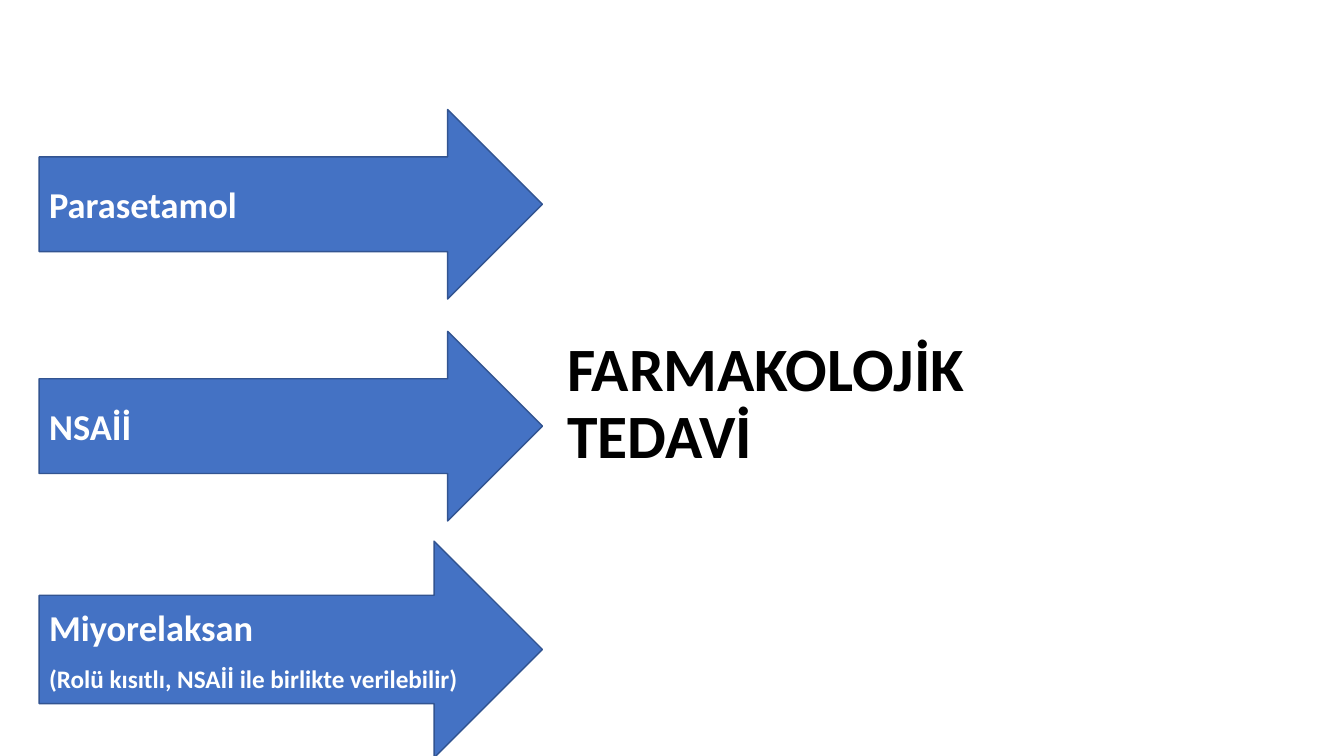
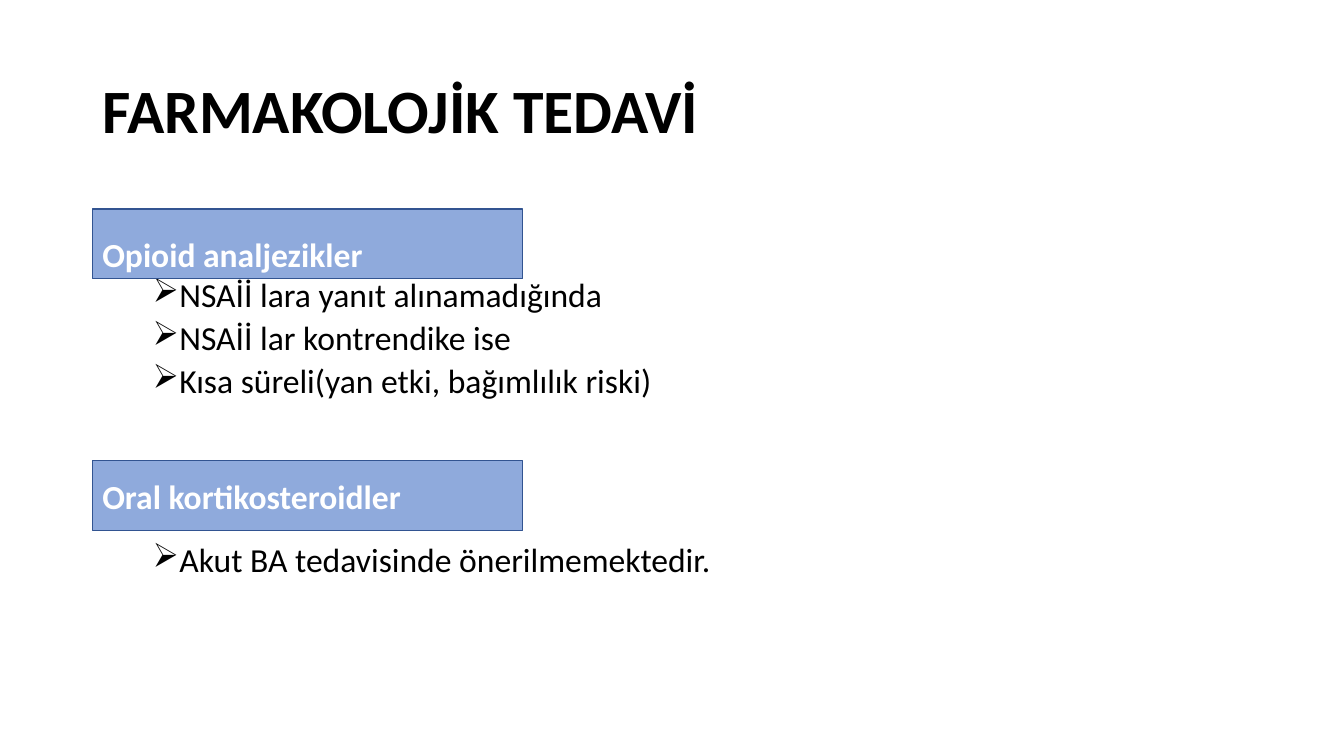
from dataclasses import dataclass

import pptx
import pptx.dml.color
import pptx.enum.shapes
import pptx.enum.text
import pptx.oxml.ns
import pptx.util
from lxml import etree

FONT = "Calibri"
BLACK, WHITE = "000000", "FFFFFF"
BLUE, LIGHT_BLUE, OUTLINE = "4472C4", "8FAADC", "325491"
TITLE = "FARMAKOLOJİK TEDAVİ"

Pt = pptx.util.Pt
Preset = pptx.enum.shapes.MSO_SHAPE
Anchor = pptx.enum.text.MSO_ANCHOR


@dataclass
class Line:
    text: str
    size: float
    spacing: float = 1.0


@dataclass
class Banner:
    """A filled shape with white bold text; lengths in points."""
    preset: Preset
    fill: str
    left: float
    top: float
    width: float
    height: float
    lines: list[Line]


@dataclass
class BulletList:
    top: float
    height: float
    items: list[str]


ARROW_LEFT, ARROW_WIDTH = 28, 359.5
ARROWS = [
    Banner(Preset.RIGHT_ARROW, BLUE, ARROW_LEFT, top, ARROW_WIDTH, height, lines)
    for top, height, lines in [
        (78.2, 135.4, [Line("Parasetamol", 26)]),
        (236.7, 135.4, [Line("NSAİİ", 26)]),
        (386.5, 154.8, [
            Line("Miyorelaksan", 26),
            Line("(Rolü kısıtlı, NSAİİ ile birlikte verilebilir)", 18, 1.5),
        ]),
    ]
]

MARGIN = 66
HEADINGS = [
    Banner(Preset.RECTANGLE, LIGHT_BLUE, MARGIN, top, 307.5, 50, [line])
    for top, line in [
        (149.2, Line("Opioid analjezikler", 24, 1.5)),
        (329, Line("Oral kortikosteroidler", 24)),
    ]
]
BULLET_LISTS = [
    BulletList(198.7, 95, [
        "NSAİİ lara yanıt alınamadığında",
        "NSAİİ lar kontrendike ise",
        "Kısa süreli(yan etki, bağımlılık riski)",
    ]),
    BulletList(388, 32, ["Akut BA tedavisinde önerilmemektedir."]),
]


def rgb(code: str) -> pptx.dml.color.RGBColor:
    return pptx.dml.color.RGBColor.from_string(code)


def add_bullet(para) -> None:
    """Give a paragraph an arrowhead bullet with a hanging indent."""
    properties = para._p.get_or_add_pPr()
    properties.set("marL", str(Pt(54)))
    properties.set("indent", str(Pt(-18)))
    bullet = etree.SubElement(properties, pptx.oxml.ns.qn("a:buChar"))
    bullet.set("char", "➢")


def write_lines(box, lines: list[Line], *, color: str = BLACK, bold: bool = False,
                anchor: Anchor = Anchor.MIDDLE, bullet: bool = False,
                space_after: float = 0) -> None:
    frame = box.text_frame
    frame.word_wrap = True
    frame.vertical_anchor = anchor
    for index, line in enumerate(lines):
        para = frame.add_paragraph() if index else frame.paragraphs[0]
        para.alignment = pptx.enum.text.PP_ALIGN.LEFT
        para.line_spacing = line.spacing
        para.space_after = Pt(space_after)
        if bullet:
            add_bullet(para)
        span = para.add_run()
        span.text = line.text
        span.font.name = FONT
        span.font.size = Pt(line.size)
        span.font.bold = bold
        span.font.color.rgb = rgb(color)


def add_title(page, left: float, top: float, width: float) -> None:
    box = page.shapes.add_textbox(Pt(left), Pt(top), Pt(width), Pt(104.4))
    write_lines(box, [Line(TITLE, 44, 0.9)], bold=True)


def add_banner(page, banner: Banner) -> None:
    box = page.shapes.add_shape(banner.preset, Pt(banner.left), Pt(banner.top),
                                Pt(banner.width), Pt(banner.height))
    box.shadow.inherit = False
    box.fill.solid()
    box.fill.fore_color.rgb = rgb(banner.fill)
    box.line.color.rgb = rgb(OUTLINE)
    box.line.width = Pt(1)
    write_lines(box, banner.lines, color=WHITE, bold=True)


def add_bullet_list(page, bullets: BulletList) -> None:
    box = page.shapes.add_textbox(Pt(MARGIN), Pt(bullets.top), Pt(828), Pt(bullets.height))
    box.text_frame.margin_top = box.text_frame.margin_bottom = 0
    write_lines(box, [Line(item, 24, 0.9) for item in bullets.items],
                anchor=Anchor.TOP, bullet=True, space_after=5)


def main() -> None:
    deck = pptx.Presentation()
    deck.slide_width, deck.slide_height = Pt(960), Pt(540)
    blank = deck.slide_layouts[6]

    page = deck.slides.add_slide(blank)
    add_title(page, 398, 237, 435)
    for arrow in ARROWS:
        add_banner(page, arrow)

    page = deck.slides.add_slide(blank)
    add_title(page, MARGIN, 28.8, 828)
    for bullets in BULLET_LISTS:
        add_bullet_list(page, bullets)
    for heading in HEADINGS:
        add_banner(page, heading)

    deck.save("out.pptx")


if __name__ == "__main__":
    main()
